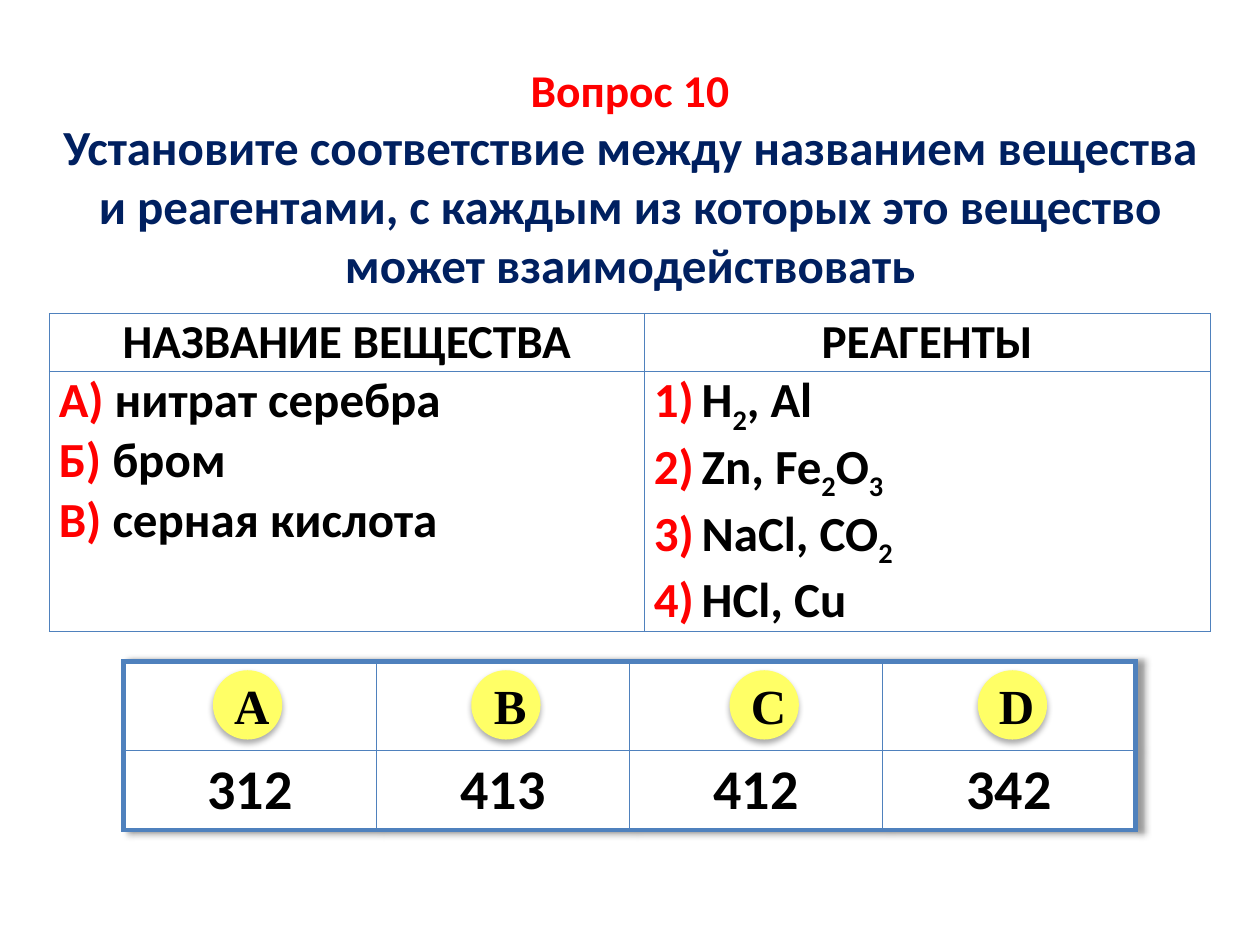
from itertools import groupby

from lxml import etree
from pptx import Presentation
from pptx.dml.color import RGBColor
from pptx.enum.shapes import MSO_SHAPE
from pptx.enum.text import MSO_ANCHOR, PP_ALIGN
from pptx.oxml.ns import qn
from pptx.util import Pt

CENTER, LEFT = PP_ALIGN.CENTER, PP_ALIGN.LEFT
TOP, MIDDLE = MSO_ANCHOR.TOP, MSO_ANCHOR.MIDDLE
OVAL, RECTANGLE = MSO_SHAPE.OVAL, MSO_SHAPE.RECTANGLE

# Content
QUESTION_NUMBER = "Вопрос 10"
QUESTION = ("Установите соответствие между названием вещества и реагентами, "
            "с каждым из которых это вещество может взаимодействовать")
HEADERS = ["НАЗВАНИЕ ВЕЩЕСТВА", "РЕАГЕНТЫ"]
SUBSTANCES = [("А) ", "нитрат серебра"), ("Б) ", "бром"), ("В) ", "серная кислота")]
REAGENTS = ["H2, Al", "Zn, Fe2O3", "NaCl, CO2", "HCl, Cu"]
# letter, left edge of its badge, answer
ANSWERS = [("A", 121.7, "312"), ("B", 269.3, "413"),
           ("C", 416.9, "412"), ("D", 558.7, "342")]

THEME = {
    "font": "Calibri", "badge_font": "Times New Roman",
    "red": "FF0000", "navy": "002060", "black": "000000",
    "white": "FFFFFF", "yellow": "FFFF66", "border": "4F81BD",
    "number": 26, "header": 27, "body": 28, "answer": 32,
}
HANGING = 27.4
THICK, THIN, HAIR = 3, 1, 0.5


def style(font, size, color, name=THEME["font"]):
    font.name, font.size, font.bold = name, Pt(size), True
    font.color.rgb = RGBColor.from_string(THEME[color])


def fill(target, color):
    target.fill.solid()
    target.fill.fore_color.rgb = RGBColor.from_string(THEME[color])


def add_color(parent, value, alpha=None):
    color = etree.SubElement(parent, qn("a:srgbClr"), val=value)
    if alpha:
        etree.SubElement(color, qn("a:alpha"), val=str(alpha * 1000))


def shadow_effect(alpha, blur, distance, angle):
    effects = etree.Element(qn("a:effectLst"))
    shadow = etree.SubElement(
        effects, qn("a:outerShdw"), blurRad=str(Pt(blur)), dist=str(Pt(distance)),
        dir=str(angle * 60000), algn="ctr", rotWithShape="0")
    add_color(shadow, THEME["black"], alpha)
    return effects


def set_borders(cell, left, right, top, bottom):
    properties = cell._tc.get_or_add_tcPr()
    sides = zip(("a:lnL", "a:lnR", "a:lnT", "a:lnB"), (left, right, top, bottom))
    for position, (side, width) in enumerate(sides):
        line = etree.Element(qn(side), w=str(Pt(width)))
        add_color(etree.SubElement(line, qn("a:solidFill")), THEME["border"])
        properties.insert(position, line)


def add_grid(slide, left, top, widths, heights):
    frame = slide.shapes.add_table(len(heights), len(widths), Pt(left), Pt(top),
                                   Pt(sum(widths)), Pt(sum(heights)))
    grid = frame.table
    grid.first_row = grid.horz_banding = False
    for column, width in zip(grid.columns, widths):
        column.width = Pt(width)
    for row, height in zip(grid.rows, heights):
        row.height = Pt(height)
    for cell in grid.iter_cells():
        cell.margin_left = cell.margin_right = Pt(5.4)
        cell.margin_top = cell.margin_bottom = 0
    return grid


def add_answers(slide):
    grid = add_grid(slide, 70.6, 378, [144.6] * 4, [51, 45.4])
    grid._tbl.tblPr.insert(0, shadow_effect(40, 4, 3, 0))
    last = len(ANSWERS) - 1
    for column, (letter, badge_left, answer) in enumerate(ANSWERS):
        for row in range(2):
            cell = grid.cell(row, column)
            fill(cell, "white")
            set_borders(cell, THICK if column == 0 else THIN,
                        THICK if column == last else THIN,
                        THICK if row == 0 else THIN,
                        THICK if row == 1 else THIN)
        cell.vertical_anchor = MIDDLE
        cell.text_frame.text = answer
        paragraph = cell.text_frame.paragraphs[0]
        paragraph.alignment = CENTER
        style(paragraph.runs[0].font, THEME["answer"], "black")

        # Letter badge
        badge = slide.shapes.add_shape(OVAL, Pt(badge_left), Pt(383), Pt(39.6), Pt(39.6))
        fill(badge, "yellow")
        badge.line.fill.background()
        badge._element.spPr.append(shadow_effect(32, 3.5, 2.2, 90))
        frame = badge.text_frame
        frame.word_wrap = False
        frame.vertical_anchor = MIDDLE
        frame.margin_left, frame.margin_right = Pt(7.2), Pt(2.2)
        frame.text = letter
        frame.paragraphs[0].alignment = CENTER
        style(frame.paragraphs[0].runs[0].font, THEME["body"], "black", THEME["badge_font"])


def add_question(slide):
    box = slide.shapes.add_shape(RECTANGLE, Pt(20), Pt(32), Pt(680), Pt(289.4))
    box.shadow.inherit = False
    fill(box, "white")
    box.line.fill.background()
    frame = box.text_frame
    frame.word_wrap = True
    frame.vertical_anchor = TOP
    frame.text = QUESTION_NUMBER + "\n" + QUESTION
    looks = [(THEME["number"], "red"), (THEME["body"], "navy")]
    for paragraph, (size, color) in zip(frame.paragraphs, looks):
        paragraph.alignment = CENTER
        style(paragraph.runs[0].font, size, color)


def list_paragraphs(cell, count):
    cell.text_frame.text = "\n" * (count - 1)
    for paragraph in cell.text_frame.paragraphs:
        paragraph.alignment = LEFT
        properties = paragraph._p.get_or_add_pPr()
        properties.set("marL", str(Pt(HANGING)))
        properties.set("indent", str(Pt(-HANGING)))
        yield paragraph


def add_run(paragraph, text, color):
    run = paragraph.add_run()
    run.text = text
    style(run.font, THEME["body"], color)
    return run


def add_matching(slide):
    grid = add_grid(slide, 28.2, 179.3, [340, 323.3], [32.4, 148.6])
    for cell in grid.iter_cells():
        cell.fill.background()
        set_borders(cell, HAIR, HAIR, HAIR, HAIR)

    for column, header in enumerate(HEADERS):
        frame = grid.cell(0, column).text_frame
        frame.text = header
        frame.paragraphs[0].alignment = CENTER
        style(frame.paragraphs[0].runs[0].font, THEME["header"], "black")

    paragraphs = list_paragraphs(grid.cell(1, 0), len(SUBSTANCES))
    for paragraph, (mark, name) in zip(paragraphs, SUBSTANCES):
        add_run(paragraph, mark, "red")
        add_run(paragraph, name, "black")

    # Numbered formulas: digits are subscripts
    paragraphs = list_paragraphs(grid.cell(1, 1), len(REAGENTS))
    for paragraph, formula in zip(paragraphs, REAGENTS):
        properties = paragraph._p.get_or_add_pPr()
        add_color(etree.SubElement(properties, qn("a:buClr")), THEME["red"])
        etree.SubElement(properties, qn("a:buFont"), typeface="+mj-lt")
        etree.SubElement(properties, qn("a:buAutoNum"), type="arabicParenR")
        for is_index, letters in groupby(formula, str.isdigit):
            run = add_run(paragraph, "".join(letters), "black")
            if is_index:
                run._r.get_or_add_rPr().set("baseline", "-25000")


def main():
    deck = Presentation()
    deck.slide_width, deck.slide_height = Pt(720), Pt(540)
    slide = deck.slides.add_slide(deck.slide_layouts[6])
    add_answers(slide)
    add_question(slide)
    add_matching(slide)
    deck.save("out.pptx")


if __name__ == "__main__":
    main()
